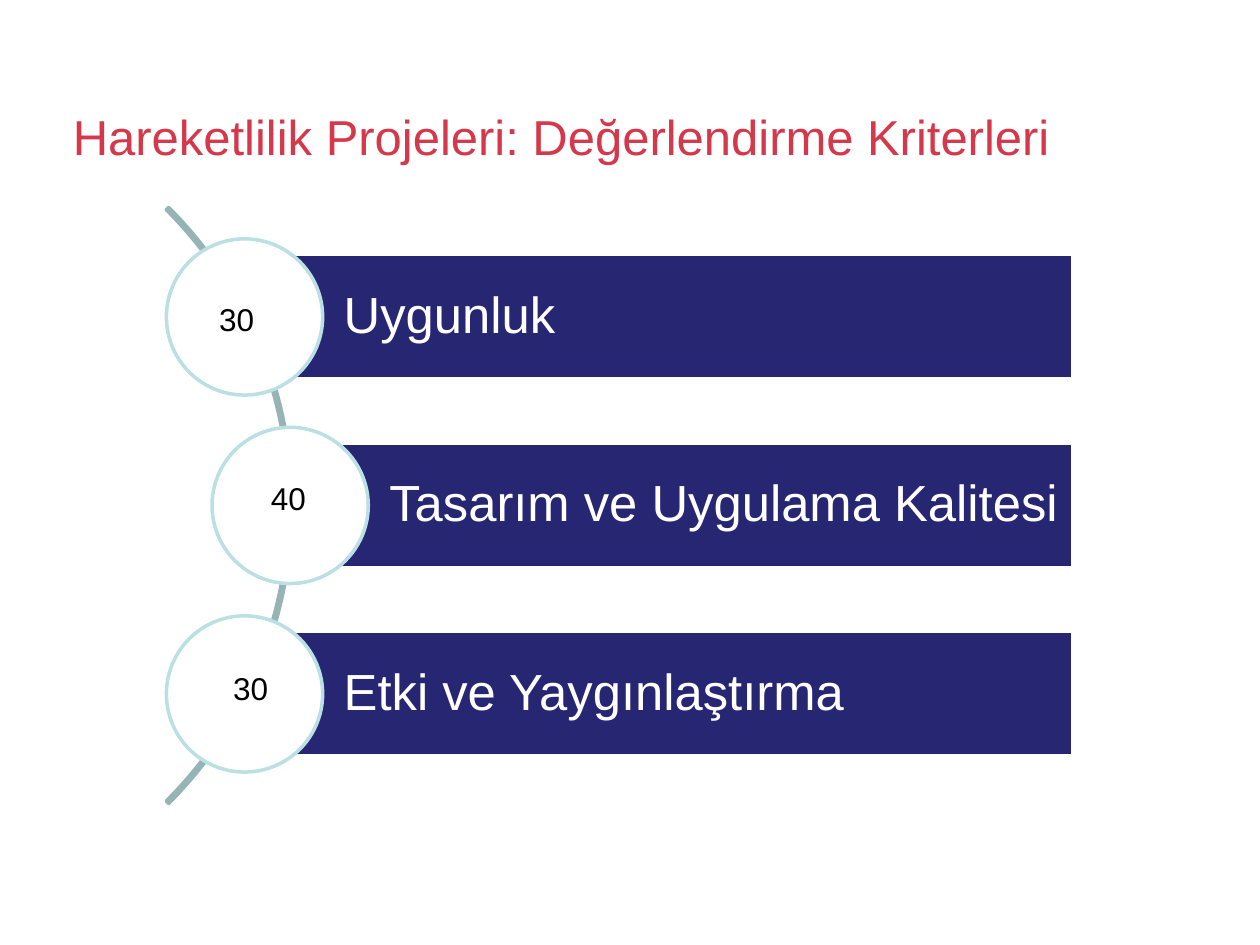
from pptx import Presentation
from pptx.dml.color import RGBColor
from pptx.enum.shapes import MSO_SHAPE as Shape
from pptx.enum.text import MSO_ANCHOR as Anchor, MSO_AUTO_SIZE as AutoSize, PP_ALIGN as Align
from pptx.util import Cm, Pt

# Content
TITLE = "Hareketlilik Projeleri: Değerlendirme Kriterleri"
# label, points, circle centre x, points box (left, top, width), in cm
CRITERIA = [
    ("Uygunluk", "30", 4.93, (4.17, 5.92, 1.37)),
    ("Tasarım ve Uygulama Kalitesi", "40", 5.85, (5.21, 9.53, 1.27)),
    ("Etki ve Yaygınlaştırma", "30", 4.93, (4.45, 13.36, 1.4)),
]

# Layout in cm
CENTRE_Y, PITCH = 10.19, 3.8
BAR_RIGHT, BAR_HEIGHT = 21.62, 2.51
CIRCLE = 3.15
ARC_LEFT, ARC_SIZE = -11.1, 16.99

# Text formats
TITLE_FONT = {"size": Pt(28), "color": "D5384B"}
LABEL_FONT = {"size": Pt(29), "color": "FFFFFF"}
POINTS_FONT = {"size": Pt(18), "color": "000000"}
LABEL_FRAME = {"margin_left": Cm(2), "margin_right": Cm(0.2), "margin_top": Cm(0.2),
               "margin_bottom": Cm(0.2), "vertical_anchor": Anchor.MIDDLE}


def paint(color_format, value):
    color_format.rgb = RGBColor.from_string(value)


def write(shape, text, font, frame_format, line_spacing=1.0):
    frame = shape.text_frame
    for name, value in {"word_wrap": True, **frame_format}.items():
        setattr(frame, name, value)
    paragraph = frame.paragraphs[0]
    paragraph.text = text
    paragraph.alignment = Align.LEFT
    paragraph.line_spacing = line_spacing
    for name, value in {"name": "Arial", "size": font["size"]}.items():
        setattr(paragraph.font, name, value)
    paint(paragraph.font.color, font["color"])


def add_shape(kind, left, top, width, height, fill, line):
    shape = slide.shapes.add_shape(kind, Cm(left), Cm(top), Cm(width), Cm(height))
    shape.shadow.inherit = False
    if fill:
        shape.fill.solid()
        paint(shape.fill.fore_color, fill)
    else:
        shape.fill.background()
    paint(shape.line.color, line)
    shape.line.width = Pt(2)
    return shape


presentation = Presentation()
presentation.slide_width, presentation.slide_height = Cm(25.4), Cm(19.05)
slide = presentation.slides.add_slide(presentation.slide_layouts[6])

# Title
title = slide.shapes.add_textbox(Cm(1.22), Cm(1.9), Cm(23.32), Cm(1.7))
write(title, TITLE, TITLE_FONT, {"vertical_anchor": Anchor.MIDDLE})

# Arc behind the circles, from 315 to 45 degrees
arc = add_shape(Shape.BLOCK_ARC, ARC_LEFT, CENTRE_Y - ARC_SIZE / 2, ARC_SIZE, ARC_SIZE,
                None, "96B3B6")
for index, value in enumerate((189, 27, 0.004)):
    arc.adjustments[index] = value

# Bars, each starting at the centre of its circle
for row, (label, points, centre_x, box) in enumerate(CRITERIA):
    centre_y = CENTRE_Y + (row - 1) * PITCH
    bar = add_shape(Shape.RECTANGLE, centre_x, centre_y - BAR_HEIGHT / 2,
                    BAR_RIGHT - centre_x, BAR_HEIGHT, "262673", "FFFFFF")
    write(bar, label, LABEL_FONT, LABEL_FRAME, line_spacing=0.9)
    add_shape(Shape.OVAL, centre_x - CIRCLE / 2, centre_y - CIRCLE / 2, CIRCLE, CIRCLE,
              "FFFFFF", "BBE0E3")
    left, top, width = box
    points_box = slide.shapes.add_textbox(Cm(left), Cm(top), Cm(width), Cm(1.02))
    write(points_box, points, POINTS_FONT, {"auto_size": AutoSize.SHAPE_TO_FIT_TEXT})

presentation.save("out.pptx")
